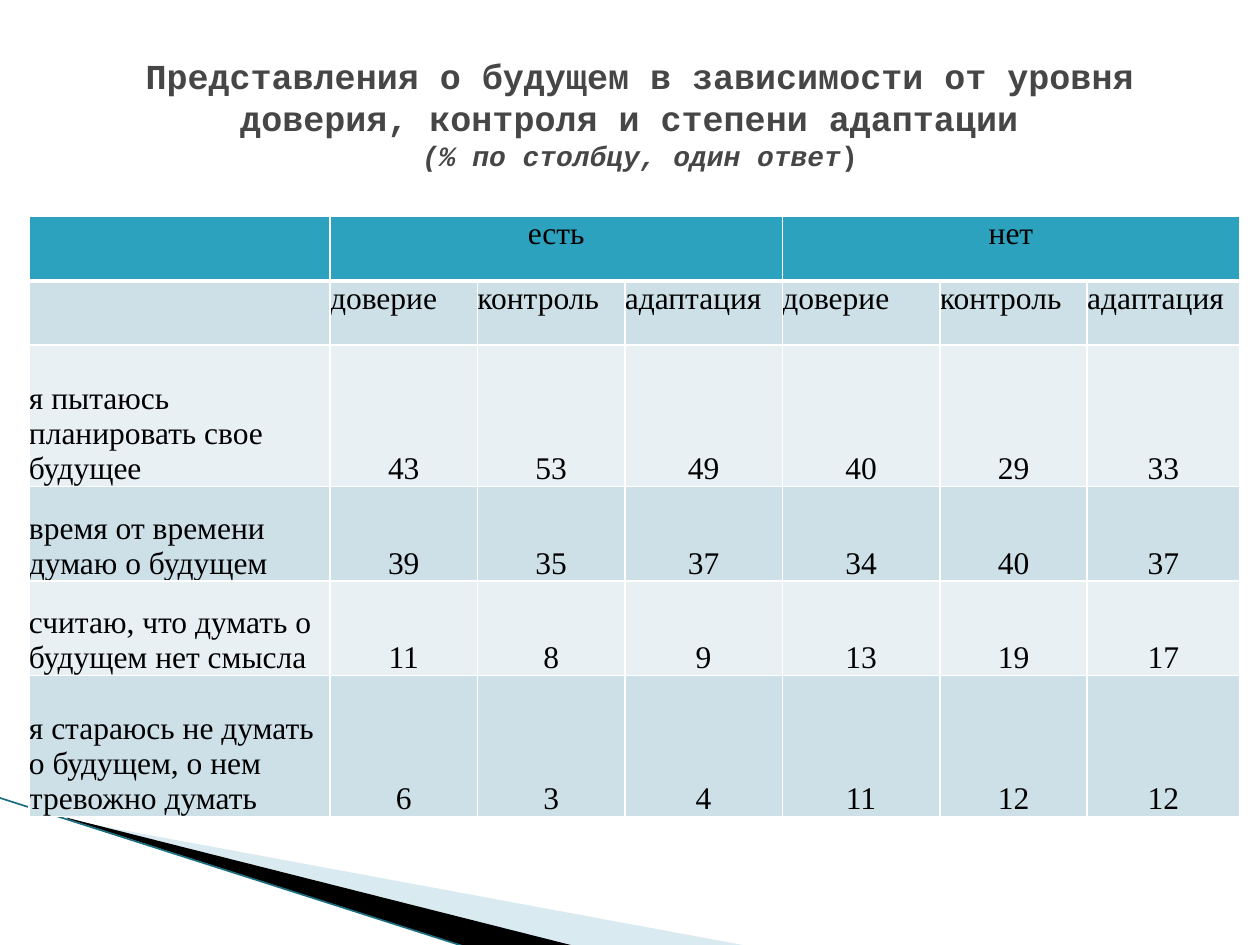
"""Build a slide with a table of views of the future by trust, control and adaptation."""
from lxml import etree
from pptx import Presentation
from pptx.dml.color import RGBColor
from pptx.enum.shapes import MSO_CONNECTOR as CONN
from pptx.enum.text import MSO_ANCHOR as ANCHOR, PP_ALIGN as ALIGN
from pptx.oxml import parse_xml
from pptx.oxml.ns import nsdecls, qn
from pptx.util import Inches, Pt


def rgb(value):
    return RGBColor.from_string(value)


def set_border(cell, side, width):
    line = parse_xml(
        f'<a:ln{side} {nsdecls("a")} w="{Pt(width)}"><a:solidFill>'
        f'<a:srgbClr val="FFFFFF"/></a:solidFill></a:ln{side}>')
    tcPr = cell._tc.get_or_add_tcPr()
    tcPr.insert("LRTB".index(side), line)


prs = Presentation()
prs.slide_width, prs.slide_height = Inches(10), Inches(7.5)
s = prs.slides.add_slide(prs.slide_layouts[6])

wedges = [
    ("A0CBDC", 40, (0.78, 5.47, 4.16, 1.58),
     [(0.55, 6.51), (5.95, 7.51), (4.56, 7.51), (0.55, 6.5)]),
    ("000000", 100, (-0.06, 6.33, 4.16, 0.92),
     [(0.53, 6.49), (4.57, 7.51), (3.72, 7.52), (0.54, 6.5)]),
]
for color, opacity, frame, points in wedges:
    points = [(Inches(x), Inches(y)) for x, y in points]
    fb = s.shapes.build_freeform(*points[0])
    fb.add_line_segments(points[1:])
    sp = fb.convert_to_shape()
    left, top, width, height = [Inches(v) for v in frame]
    dx, dy = sp.left - left, sp.top - top
    sp.left, sp.top, sp.width, sp.height = left, top, width, height
    outline = sp._element.spPr.find(".//" + qn("a:path"))
    outline.set("w", str(width))
    outline.set("h", str(height))
    for pt in outline.iter(qn("a:pt")):
        pt.set("x", str(int(pt.get("x")) + dx))
        pt.set("y", str(int(pt.get("y")) + dy))
    sp.shadow.inherit = False
    sp.fill.solid()
    sp.fill.fore_color.rgb = rgb(color)
    sp.line.fill.background()
    if opacity < 100:
        clr = sp.fill._xPr.find(qn("a:solidFill"))[0]
        etree.SubElement(clr, qn("a:alpha"), val=str(opacity * 1000))

edge = s.shapes.add_connector(
    CONN.STRAIGHT, Inches(-0.01), Inches(6.33), Inches(3.71), Inches(7.52))
edge.line.color.rgb = rgb("1B6E80")
edge.line.width = Pt(0.95)
etree.SubElement(edge._element.spPr, qn("a:effectLst"))

title = s.shapes.add_textbox(Inches(0.39), Inches(0.16), Inches(9.38), Inches(1.48))
tf = title.text_frame
tf.word_wrap = True
tf.vertical_anchor = ANCHOR.MIDDLE
p = tf.paragraphs[0]
p.alignment = ALIGN.CENTER
title_runs = [
    ("Представления о будущем в зависимости от уровня доверия, "
     "контроля и степени адаптации ", 20, False),
    ("(% по столбцу, один ответ", 16, True),
    (")", 16, False),
]
for i, (text, size, italic) in enumerate(title_runs):
    if i == 1:
        p.add_line_break()
    r = p.add_run()
    r.text = text
    r.font.name = "Courier New"
    r.font.size = Pt(size)
    r.font.bold = True
    r.font.italic = italic
    r.font.color.rgb = rgb("464646")

measures = ["доверие", "контроль", "адаптация"]
rows = [
    ["", "есть", "", "", "нет", "", ""],
    [""] + measures * 2,
    ["я пытаюсь планировать свое будущее", 43, 53, 49, 40, 29, 33],
    ["время от времени думаю о будущем", 39, 35, 37, 34, 40, 37],
    ["считаю, что думать о будущем нет смысла", 11, 8, 9, 13, 19, 17],
    ["я стараюсь не думать о будущем, о нем тревожно думать", 6, 3, 4, 11, 12, 12],
]
widths = [2.39, 1.17, 1.17, 1.25, 1.25, 1.17, 1.21]
heights = [0.51, 0.51, 1.12, 0.75, 0.75, 1.12]
fills = ["2DA2BF", "CDE0E8", "E8F0F4", "CDE0E8", "E8F0F4", "CDE0E8"]

table = s.shapes.add_table(
    len(rows), len(widths), Inches(0.23), Inches(1.72),
    Inches(sum(widths)), Inches(sum(heights))).table
table.first_row = table.horz_banding = False
for column, width in zip(table.columns, widths):
    column.width = Inches(width)
for row, height in zip(table.rows, heights):
    row.height = Inches(height)
for first in (1, 4):
    table.cell(0, first).merge(table.cell(0, first + 2))

for i, row in enumerate(rows):
    for j, value in enumerate(row):
        cell = table.cell(i, j)
        cell.fill.solid()
        cell.fill.fore_color.rgb = rgb(fills[i])
        cell.margin_left = cell.margin_right = 0
        cell.margin_top = cell.margin_bottom = 0
        cell.vertical_anchor = ANCHOR.BOTTOM if i > 1 else ANCHOR.TOP
        for side in "LRTB":
            thick = (i, side) in [(0, "B"), (1, "T")]
            set_border(cell, side, 3 if thick else 1)
        if value == "":
            continue
        p = cell.text_frame.paragraphs[0]
        if i == 1:
            p.alignment = ALIGN.JUSTIFY
        else:
            p.alignment = ALIGN.CENTER if j else ALIGN.LEFT
        r = p.add_run()
        r.text = str(value)
        r.font.name = "Times New Roman"
        r.font.size = Pt(18)
        r.font.color.rgb = rgb("000000")

prs.save("out.pptx")
